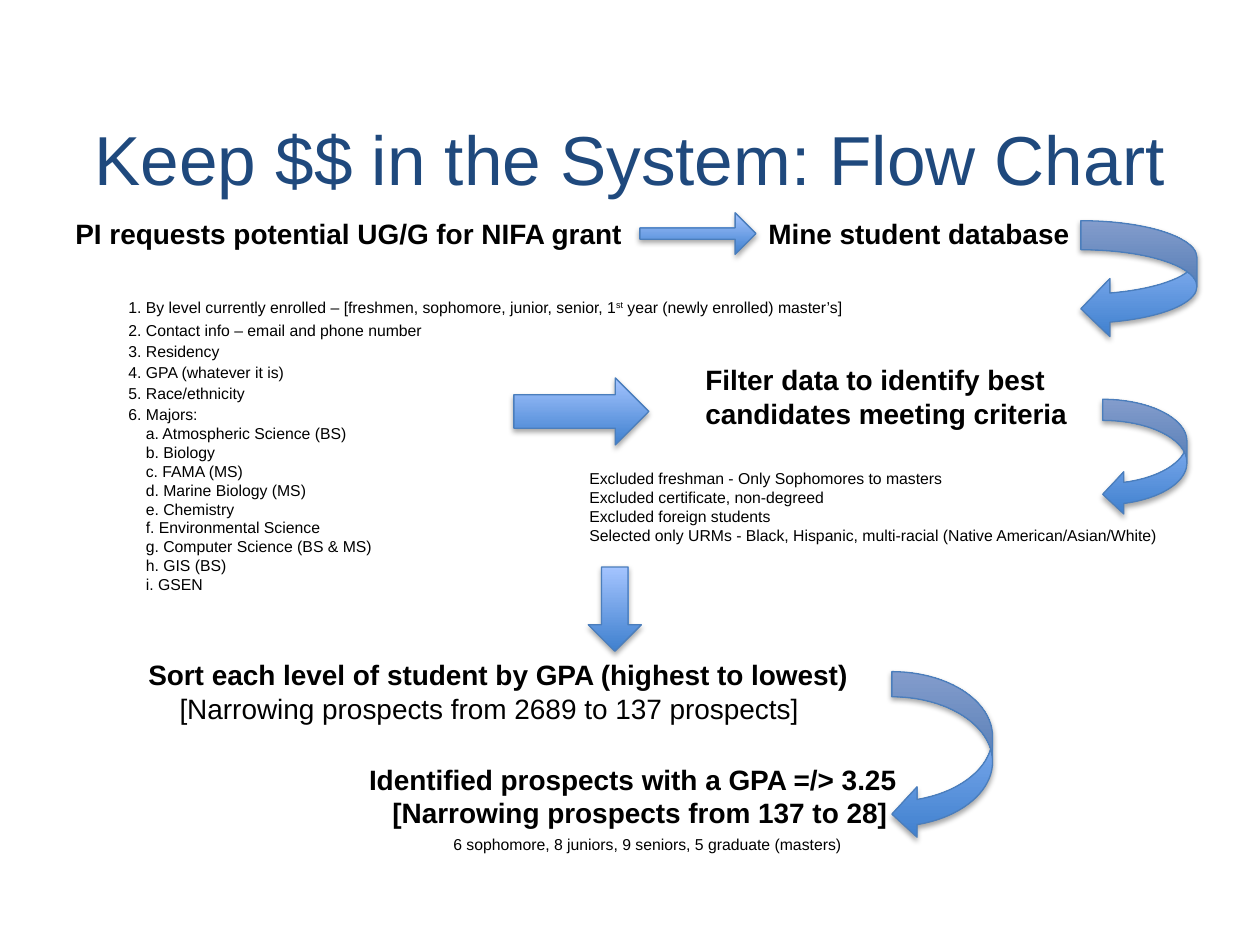
"""Build the student prospect flow chart slide."""
from dataclasses import dataclass

from lxml import etree
from pptx import Presentation
from pptx import util as u
from pptx.dml.color import RGBColor
from pptx.enum import shapes, text

NS = "http://schemas.openxmlformats.org/drawingml/2006/main"
SHADOW = (
    f'<a:outerShdw xmlns:a="{NS}" blurRad="40000" dist="23000" dir="5400000" '
    'rotWithShape="0"><a:srgbClr val="000000"><a:alpha val="35000"/>'
    '</a:srgbClr></a:outerShdw>'
)


@dataclass(frozen=True)
class Theme:
    """Colours and type sizes of the slide."""
    font: str = "Arial"
    ink: str = "000000"
    navy: str = "1F497D"
    deep: str = "3F80CE"
    pale: str = "A4C4FF"
    edge: str = "4B7EBC"
    title: float = 39.6
    step: float = 16
    note: float = 9


def write(para, words, size, color, face, bold=False, raised=False):
    """Add a run of words to a paragraph."""
    run = para.add_run()
    run.text = words
    font = run.font
    font.name, font.size, font.bold = face, u.Pt(size), bold
    font.color.rgb = RGBColor.from_string(color)
    if raised:
        run._r.get_or_add_rPr().set("baseline", "30000")


class Chart:
    """Hold the theme and the current slide, and draw on it."""

    def __init__(self, theme, slide):
        self.theme, self.slide = theme, slide

    def frame(self, area, wrap=False):
        """Add an empty text box and return its frame."""
        box = self.slide.shapes.add_textbox(*map(u.Cm, area))
        box.text_frame.word_wrap = wrap
        return box.text_frame

    def title(self, area, words):
        """Add the centred slide title."""
        frame = self.frame(area, wrap=True)
        frame.vertical_anchor = text.MSO_ANCHOR.MIDDLE
        para = frame.paragraphs[0]
        para.alignment = text.PP_ALIGN.CENTER
        write(para, words, self.theme.title, self.theme.navy, self.theme.font)

    def lines(self, area, size, *rows, bold=False):
        """Add a text box from rows of runs, each row with its indent."""
        frame = self.frame(area)
        for num, (indent, *runs) in enumerate(rows):
            para = frame.add_paragraph() if num else frame.paragraphs[0]
            para.alignment = text.PP_ALIGN.LEFT
            if indent:
                para._p.get_or_add_pPr().set("marL", str(u.Cm(indent)))
            for words, form in runs:
                form = {"bold": bold, **form}
                write(para, words, size, self.theme.ink, self.theme.font, **form)

    def step(self, area, *rows):
        """Add a bold step of the flow."""
        self.lines(area, self.theme.step, *rows, bold=True)

    def note(self, area, *rows):
        """Add small detail text."""
        self.lines(area, self.theme.note, *rows)

    def arrow(self, kind, area, *adjust):
        """Add a shaded block arrow."""
        shape = self.slide.shapes.add_shape(kind, *map(u.Cm, area))
        for num, value in enumerate(adjust):
            shape.adjustments[num] = value
        shape.fill.gradient()
        shape.fill.gradient_angle = 90
        tones = (self.theme.deep, self.theme.pale)
        for place, (stop, tone) in enumerate(zip(shape.fill.gradient_stops, tones)):
            stop.position = place
            stop.color.rgb = RGBColor.from_string(tone)
        shape.line.color.rgb = RGBColor.from_string(self.theme.edge)
        shape.line.width = u.Pt(0.75)
        shape.shadow.inherit = False
        effects = shape._element.spPr.find(f"{{{NS}}}effectLst")
        effects.append(etree.fromstring(SHADOW))


def row(words, indent=0, **form):
    """Return a row made of one run."""
    return indent, (words, form)


def main():
    """Draw the slide and save it."""
    deck = Presentation()
    deck.slide_width, deck.slide_height = u.Cm(25.4), u.Cm(19.05)
    chart = Chart(Theme(), deck.slides.add_slide(deck.slide_layouts[6]))

    chart.title((1.27, 1.6, 22.86, 3.18), "Keep $$ in the System: Flow Chart")
    chart.step((1.27, 4.24, 11.68, 0.94),
               row("PI requests potential UG/G for NIFA grant"))
    chart.step((15.24, 4.24, 6.81, 0.94), row("Mine student database"))

    chart.note((2.34, 5.88, 15.16, 0.64), (
        0,
        ("1. By level currently enrolled – [freshmen, sophomore, junior, senior, 1", {}),
        ("st", {"raised": True}),
        (" year (newly enrolled) master’s]", {}),
    ))
    fields = (
        ("2. Contact info – email and phone number", 6.48),
        ("3. Residency", 2.36),
        ("4. GPA (whatever it is)", 3.71),
        ("5. Race/ethnicity", 2.87),
    )
    top, pitch = 6.35, 0.42
    for num, (words, width) in enumerate(fields):
        chart.note((2.34, top + num * pitch, width, 0.64), row(words))
    majors = (
        "a. Atmospheric Science (BS)", "b. Biology", "c. FAMA (MS)",
        "d. Marine Biology (MS)", "e. Chemistry", "f. Environmental Science",
        "g. Computer Science (BS & MS)", "h. GIS (BS)", "i. GSEN",
    )
    chart.note((2.34, top + len(fields) * pitch, 5.46, 4.11), row("6. Majors:"),
               *(row(major, 0.35) for major in majors))

    chart.step((13.97, 7.19, 7.9, 1.63), row("Filter data to identify best"),
               row("candidates meeting criteria"))
    chart.note(
        (11.63, 9.32, 12.07, 1.8),
        row("Excluded freshman - Only Sophomores to masters"),
        row("Excluded certificate, non-degreed"),
        row("Excluded foreign students"),
        row("Selected only URMs - Black, Hispanic, multi-racial "
            "(Native American/Asian/White)"),
    )
    chart.step((2.74, 13.13, 14.81, 1.63),
               row("Sort each level of student by GPA (highest to lowest)"),
               row("[Narrowing prospects from 2689 to 137 prospects]", 0.63, bold=False))
    chart.step((7.19, 15.24, 11.46, 1.63),
               row("Identified prospects with a GPA =/> 3.25"),
               row("[Narrowing prospects from 137 to 28]", 0.47))
    chart.note((8.89, 16.71, 8.41, 0.64),
               row("6 sophomore, 8 juniors, 9 seniors, 5 graduate (masters)"))

    kinds = shapes.MSO_SHAPE
    chart.arrow(kinds.RIGHT_ARROW, (12.9, 4.29, 2.34, 0.84), 0.27, 0.5)
    chart.arrow(kinds.RIGHT_ARROW, (10.36, 7.62, 2.72, 1.35))
    chart.arrow(kinds.DOWN_ARROW, (11.86, 11.43, 1.07, 1.7))
    turns = ((21.79, 4.45, 2.34, 2.36), (22.23, 8.05, 1.7, 2.34),
             (17.98, 13.54, 2.03, 3.38))
    for turn in turns:
        chart.arrow(kinds.CURVED_LEFT_ARROW, turn)

    deck.save("out.pptx")


if __name__ == "__main__":
    main()
